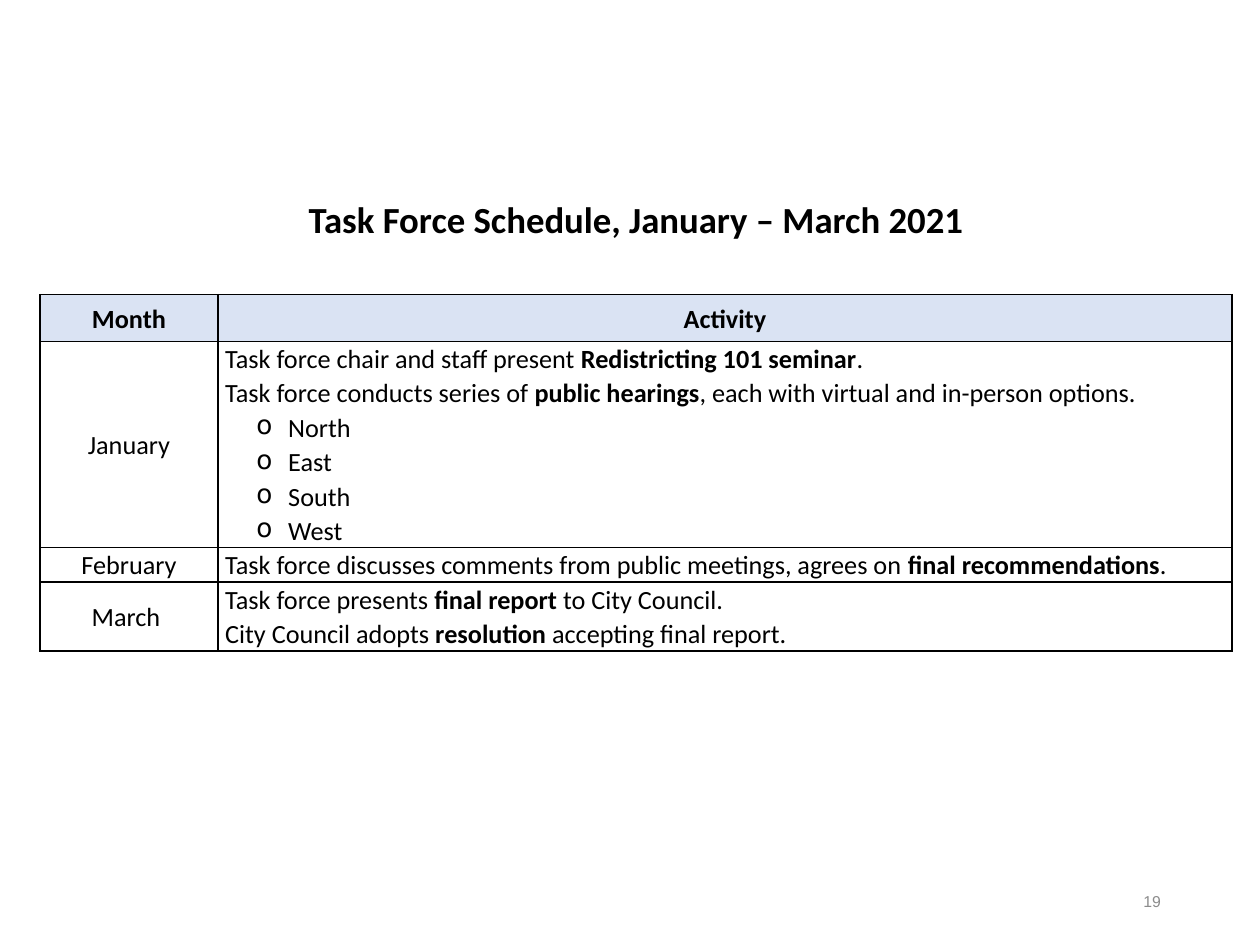
from dataclasses import dataclass, field

from lxml import etree
from pptx import Presentation
from pptx.dml.color import RGBColor
from pptx.enum import text
from pptx.oxml import ns
from pptx.util import Cm, Pt

COLORS = {"ink": "000000", "header": "DAE3F3", "number": "8C8C8C"}
LEFT, WIDTH = 0.81, 24.03
COL_WIDTHS = (3.58, 20.45)
LINE_SPACING = 1.07
CENTER = text.PP_ALIGN.CENTER


@dataclass
class Month:
    name: str
    height: float
    activities: list[str]  # bold passages stand between asterisks
    places: list[str] = field(default_factory=list)


MONTHS = [
    Month("January", 4.06,
          ["Task force chair and staff present *Redistricting 101 seminar*.",
           "Task force conducts series of *public hearings*, each with virtual and in-person options."],
          ["North", "East", "South", "West"]),
    Month("February", 0.69,
          ["Task force discusses comments from public meetings, agrees on *final recommendations*."]),
    Month("March ", 1.37,
          ["Task force presents *final report *to City Council.",
           "City Council adopts *resolution* accepting final report."]),
]


def style(r, size: float, color: str = "ink", bold: bool = False, name: str = "Calibri") -> None:
    r.font.name, r.font.size, r.font.bold = name, Pt(size), bold
    r.font.color.rgb = RGBColor.from_string(COLORS[color])


def add_bullet(p) -> None:
    pPr = p._p.get_or_add_pPr()
    pPr.set("marL", str(Cm(1.27)))
    pPr.set("indent", str(-Cm(0.64)))
    etree.SubElement(pPr, ns.qn("a:buChar"), char="o")


def add_borders(cell) -> None:
    tcPr = cell._tc.get_or_add_tcPr()
    for side in ("lnL", "lnR", "lnT", "lnB"):
        ln = etree.SubElement(tcPr, ns.qn(f"a:{side}"), w=str(Pt(1)))
        fill = etree.SubElement(ln, ns.qn("a:solidFill"))
        etree.SubElement(fill, ns.qn("a:srgbClr"), val=COLORS["ink"])


def fill_cell(cell, lines: list[str], bullets: list[str] = (), header: bool = False,
              align=None) -> None:
    cell.vertical_anchor = text.MSO_ANCHOR.MIDDLE
    cell.margin_left = cell.margin_right = Cm(0.15)
    cell.margin_top = cell.margin_bottom = 0
    add_borders(cell)
    if header:
        cell.fill.solid()
        cell.fill.fore_color.rgb = RGBColor.from_string(COLORS["header"])
    else:
        cell.fill.background()
    tf = cell.text_frame
    for i, line in enumerate([*lines, *bullets]):
        p = tf.add_paragraph() if i else tf.paragraphs[0]
        if i >= len(lines):
            add_bullet(p)
        p.alignment, p.line_spacing = align, LINE_SPACING
        for j, part in enumerate(line.split("*")):
            r = p.add_run()
            r.text = part
            style(r, 15, bold=header or j % 2 == 1)


def add_title(slide) -> None:
    sp = slide.shapes.title
    sp.left, sp.top, sp.width, sp.height = Cm(LEFT), Cm(3.89), Cm(WIDTH), Cm(1.14)
    tf = sp.text_frame
    tf.text = "Task Force Schedule, January – March 2021"
    tf.vertical_anchor = text.MSO_ANCHOR.MIDDLE
    p = tf.paragraphs[0]
    p.alignment, p.line_spacing = CENTER, 0.9
    style(p.runs[0], 21, bold=True)


def add_schedule(slide) -> None:
    heights = [0.94] + [m.height for m in MONTHS]
    table = slide.shapes.add_table(len(heights), len(COL_WIDTHS), Cm(LEFT), Cm(5.94),
                                   Cm(WIDTH), Cm(sum(heights))).table
    table.horz_banding = False
    for col, width in zip(table.columns, COL_WIDTHS):
        col.width = Cm(width)
    for row, height in zip(table.rows, heights):
        row.height = Cm(height)
    for i, heading in enumerate(("Month", "Activity")):
        fill_cell(table.cell(0, i), [heading], header=True, align=CENTER)
    for i, month in enumerate(MONTHS, start=1):
        fill_cell(table.cell(i, 0), [month.name], align=CENTER)
        fill_cell(table.cell(i, 1), month.activities, month.places)


def add_page_number(slide, number: int) -> None:
    tf = slide.shapes.add_textbox(Cm(17.93), Cm(17.65), Cm(5.72), Cm(1.02)).text_frame
    tf.word_wrap = True
    tf.vertical_anchor = text.MSO_ANCHOR.MIDDLE
    tf.text = str(number)
    p = tf.paragraphs[0]
    p.alignment = text.PP_ALIGN.RIGHT
    style(p.runs[0], 9, "number", name="Arial")


def main() -> None:
    prs = Presentation()
    prs.slide_width, prs.slide_height = Cm(25.4), Cm(19.05)
    slide = prs.slides.add_slide(prs.slide_layouts[5])
    add_title(slide)
    add_schedule(slide)
    add_page_number(slide, 19)
    prs.save("out.pptx")


if __name__ == "__main__":
    main()
